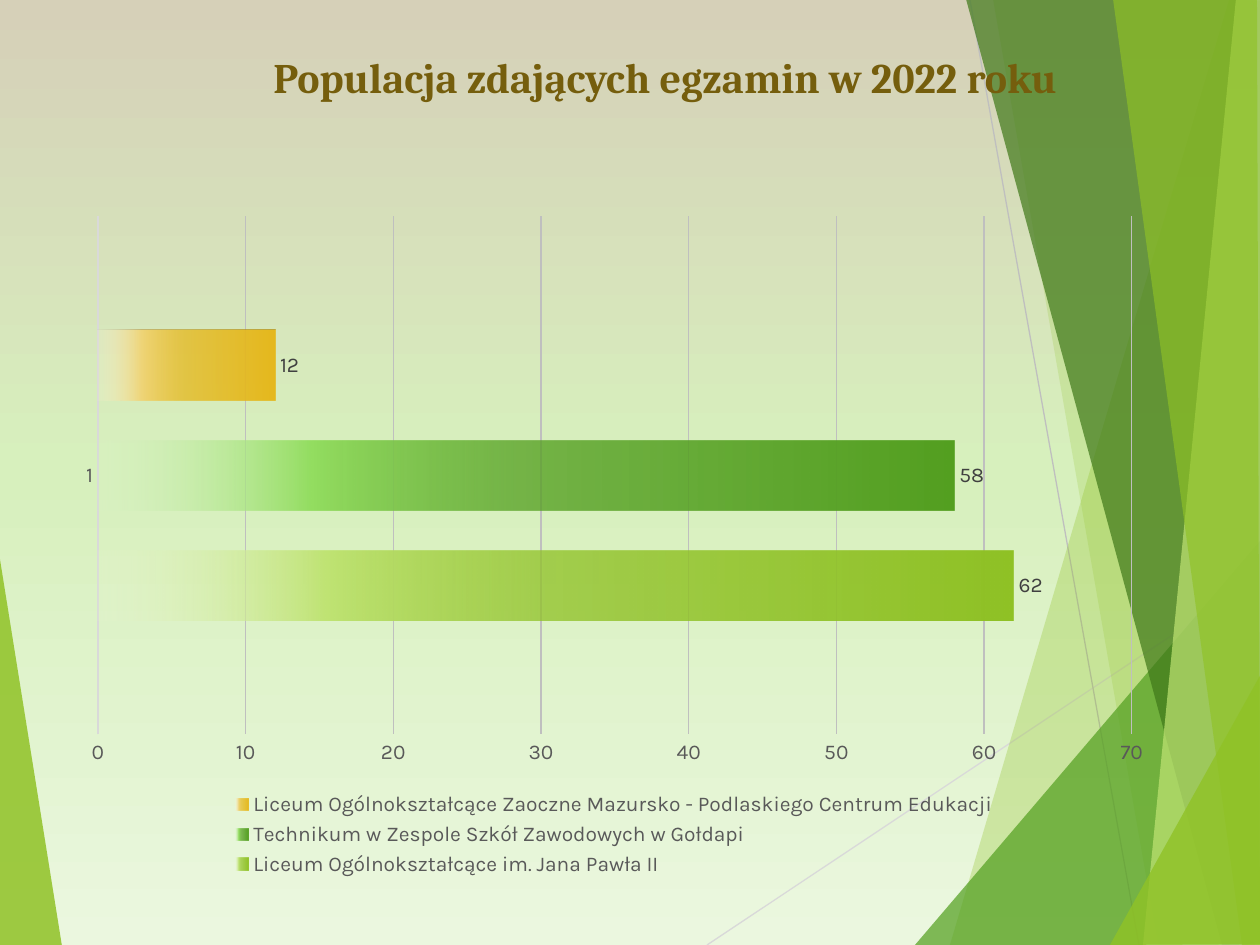
from lxml import etree
from pptx import Presentation
from pptx.chart.data import CategoryChartData
from pptx.dml.color import RGBColor
from pptx.enum.chart import XL_CHART_TYPE, XL_LABEL_POSITION, XL_LEGEND_POSITION, XL_TICK_MARK
from pptx.enum.shapes import MSO_CONNECTOR
from pptx.enum.text import MSO_ANCHOR, PP_ALIGN
from pptx.oxml.ns import qn
from pptx.util import Pt

PX = 914400 / 126
BAR = XL_CHART_TYPE.BAR_CLUSTERED
OUTSIDE_END = XL_LABEL_POSITION.OUTSIDE_END
BOTTOM = XL_LEGEND_POSITION.BOTTOM
NO_TICK = XL_TICK_MARK.NONE
STRAIGHT = MSO_CONNECTOR.STRAIGHT
TOP = MSO_ANCHOR.TOP
CENTER = PP_ALIGN.CENTER
HEADING_FONT, BODY_FONT = "Cambria", "Karla"

COLORS = {
    "sand": "D6D0B8", "mint": "D7F0BD", "pale": "EBF7DF",
    "lime": "90C226", "light_lime": "C0E474", "pale_lime": "EAF6D1",
    "green": "54A021", "light_green": "94DE61", "pale_green": "DBF4CA",
    "gold": "E6B91E", "light_gold": "F0D578", "pale_gold": "FAF1D2",
    "forest": "3F7819", "title": "755E0D", "axis_text": "595959",
    "label_text": "404040", "silver": "D9D9D9", "gray": "BFBFBF", "black": "000000",
}

FACETS = [
    ("lime", 85, [(-1, 553), (62, 946), (-1, 945)]),
    ("lime", 30, [(1229, 0), (950, 945), (1262, 946), (1261, 1)]),
    ("lime", 20, [(993, -1), (1158, 945), (1261, 945), (1261, -1)]),
    ("green", 72, [(915, 945), (1260, 541), (1261, 945)]),
    ("forest", 70, [(966, -1), (1222, 945), (1261, 944), (1261, -1)]),
    ("light_lime", 70, [(1236, -1), (1143, 945), (1261, 945), (1260, -1)]),
    ("lime", 65, [(1113, -1), (1242, 945), (1260, 945), (1257, -1)]),
    ("lime", 80, [(1110, 945), (1261, 674), (1261, 944)]),
]
RAYS = [("silver", (707, 945), (1261, 576)), ("gray", (970, 0), (1139, 945))]
SCHOOLS = [
    ("Liceum Ogólnokształcące im. Jana Pawła II", 62, "lime"),
    ("Technikum w Zespole Szkół Zawodowych w Gołdapi", 58, "green"),
    ("Liceum Ogólnokształcące Zaoczne Mazursko - Podlaskiego Centrum Edukacji", 12, "gold"),
]


def px(*lengths):
    """Turn pixel lengths into EMU."""
    return [round(length * PX) for length in lengths]


def rgb(name):
    """Look up a named colour."""
    return RGBColor.from_string(COLORS[name])


def add_alpha(color_element, percent):
    """Make a colour element partly transparent."""
    etree.SubElement(color_element, qn("a:alpha")).set("val", str(percent * 1000))


def set_gradient(owner, stops, angle):
    """Rewrite the gradient inside an element as (position, colour, opacity) stops."""
    gradient = owner.find(".//" + qn("a:gradFill"))
    for child in list(gradient):
        gradient.remove(child)
    stop_list = etree.SubElement(gradient, qn("a:gsLst"))
    for position, name, opacity in stops:
        stop = etree.SubElement(stop_list, qn("a:gs"), pos=str(position * 1000))
        color = etree.SubElement(stop, qn("a:srgbClr"), val=COLORS[name])
        add_alpha(color, opacity)
    etree.SubElement(gradient, qn("a:lin"), ang=str(angle * 60000), scaled="0")


def set_font(font, size, color, name=BODY_FONT, bold=False):
    """Set the typeface, size, colour and weight of a font."""
    font.name, font.size, font.bold = name, Pt(size), bold
    font.color.rgb = rgb(color)


def paint_background(slide):
    """Give the slide its vertical gradient."""
    slide.background.fill.gradient()
    stops = [(0, "sand", 100), (50, "mint", 100), (100, "pale", 100)]
    set_gradient(slide.background._cSld, stops, 90)


def add_facet(slide, color, opacity, points):
    """Add a translucent polygon."""
    builder = slide.shapes.build_freeform(*points[0], scale=PX)
    builder.add_line_segments(points[1:], close=True)
    shape = builder.convert_to_shape()
    shape.shadow.inherit = False
    shape.fill.solid()
    shape.fill.fore_color.rgb = rgb(color)
    add_alpha(shape._element.spPr.find(".//" + qn("a:srgbClr")), opacity)
    shape.line.fill.background()


def add_ray(slide, color, start, end):
    """Add a thin straight line."""
    connector = slide.shapes.add_connector(STRAIGHT, *px(*start, *end))
    connector.line.color.rgb = rgb(color)
    connector.line.width = Pt(0.75)
    etree.SubElement(connector._element.spPr, qn("a:effectLst"))


def add_title(slide, text):
    """Add the centred slide title."""
    frame = slide.shapes.add_textbox(*px(98, 45, 1134, 158)).text_frame
    frame.word_wrap = True
    frame.vertical_anchor = TOP
    paragraph = frame.paragraphs[0]
    paragraph.alignment = CENTER
    run = paragraph.add_run()
    run.text = text
    set_font(run.font, 24, "title", HEADING_FONT, True)


def style_axes(chart):
    """Style the category and value axes and the gridlines."""
    for axis in (chart.category_axis, chart.value_axis):
        axis.major_tick_mark = axis.minor_tick_mark = NO_TICK
        set_font(axis.tick_labels.font, 12, "axis_text")
    category_line = chart.category_axis.format.line
    category_line.color.rgb = rgb("silver")
    category_line.width = Pt(1.5)
    value_axis = chart.value_axis
    value_axis.minimum_scale, value_axis.maximum_scale, value_axis.major_unit = 0, 70, 10
    value_axis.format.line.fill.background()
    grid_line = value_axis.major_gridlines.format.line
    grid_line.color.rgb = rgb("gray")
    grid_line.width = Pt(0.75)


def style_series(series, color):
    """Fade a series toward its base and label its values."""
    series.format.fill.gradient()
    stops = [(0, color, 100), (51, color, 75),
             (75, f"light_{color}", 100), (100, f"pale_{color}", 15)]
    set_gradient(series._element, stops, 180)
    labels = series.data_labels
    labels.show_value = True
    labels.position = OUTSIDE_END
    labels.number_format, labels.number_format_is_linked = "0", False
    set_font(labels.font, 12, "label_text")


def add_population_chart(slide):
    """Add the bar chart of exam takers by school."""
    data = CategoryChartData(number_format="0")
    data.categories = ["1"]
    for name, count, _ in SCHOOLS:
        data.add_series(name, [count])
    chart = slide.shapes.add_chart(BAR, *px(64, 203, 1101, 679), data).chart
    set_font(chart.font, 10, "black")
    chart.has_title = False
    chart.has_legend = True
    chart.legend.position = BOTTOM
    chart.legend.include_in_layout = False
    set_font(chart.legend.font, 12, "axis_text")
    style_axes(chart)
    plot = chart.plots[0]
    plot.vary_by_categories = False
    plot.gap_width, plot.overlap = 326, -58
    for series, (_, _, color) in zip(plot.series, SCHOOLS):
        style_series(series, color)


def main():
    """Build and save the slide."""
    presentation = Presentation()
    presentation.slide_width, presentation.slide_height = px(1260, 945)
    slide = presentation.slides.add_slide(presentation.slide_layouts[6])
    paint_background(slide)
    add_facet(slide, *FACETS[0])
    for ray in RAYS:
        add_ray(slide, *ray)
    for facet in FACETS[1:]:
        add_facet(slide, *facet)
    add_title(slide, "Populacja zdających egzamin w 2022 roku")
    add_population_chart(slide)
    presentation.save("out.pptx")


if __name__ == "__main__":
    main()
